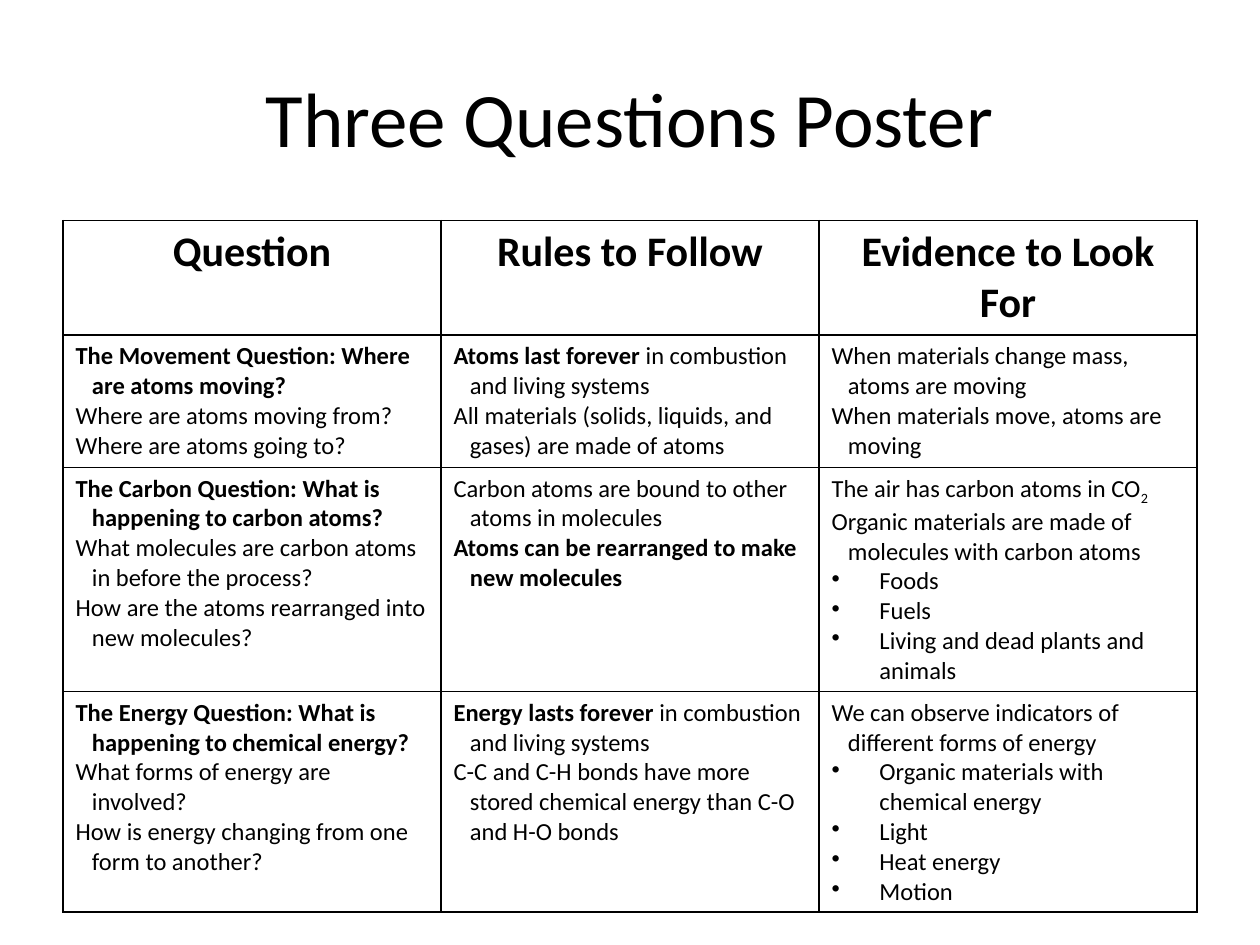
from lxml import etree
from pptx import Presentation, util as u
from pptx.dml.color import RGBColor
from pptx.enum import text
from pptx.oxml import ns

COLORS = {"ink": "000000", "paper": "FFFFFF"}
FONT = "Calibri"
HEADERS = ["Question", "Rules to Follow", "Evidence to Look For"]
ROWS = [
    [
        ["*The Movement Question: Where are atoms moving?*",
         "Where are atoms moving from?",
         "Where are atoms going to?"],
        ["*Atoms last forever* in combustion and living systems",
         "All materials (solids, liquids, and gases) are made of atoms"],
        ["When materials change mass, atoms are moving",
         "When materials move, atoms are moving"],
    ],
    [
        ["*The Carbon Question: What is happening to carbon atoms?*",
         "What molecules are carbon atoms in before the process?",
         "How are the atoms rearranged into new molecules?"],
        ["Carbon atoms are bound to other atoms in molecules",
         "*Atoms can be rearranged to make new molecules*"],
        ["The air has carbon atoms in CO_2_",
         "Organic materials are made of molecules with carbon atoms",
         "• Foods", "• Fuels", "• Living and dead plants and animals"],
    ],
    [
        ["*The Energy Question: What is happening to chemical energy?*",
         "What forms of energy are involved?",
         "How is energy changing from one form to another?"],
        ["*Energy lasts forever* in combustion and living systems",
         "C-C and C-H bonds have more stored chemical energy than C-O and H-O bonds"],
        ["We can observe indicators of different forms of energy",
         "• Organic materials with chemical energy",
         "• Light", "• Heat energy", "• Motion"],
    ],
]
ROW_HEIGHTS = [0.91, 1.05, 1.78, 1.75]


def style(para, size, bold=None):
    """Set the shared font of a paragraph."""
    font = para.font
    font.name, font.size, font.bold = FONT, u.Pt(size), bold
    font.color.rgb = RGBColor.from_string(COLORS["ink"])


def add_spans(para, marked):
    """Add runs from text where *...* is bold and _..._ is subscript."""
    for i, strong in enumerate(marked.split("*")):
        for j, piece in enumerate(strong.split("_")):
            if piece:
                span = para.add_run()
                span.text = piece
                if i % 2:
                    span.font.bold = True
                if j % 2:
                    span.font._element.set("baseline", "-25000")


def indent(para, hang, bullet=None):
    """Give a paragraph a hanging indent and an optional bullet."""
    props = para._p.get_or_add_pPr()
    props.set("marL", str(u.Inches(hang)))
    props.set("indent", str(-u.Inches(hang)))
    if bullet:
        mark = etree.Element(ns.qn("a:buChar"), char=bullet)
    else:
        mark = etree.Element(ns.qn("a:buNone"))
    props.insert(0, mark)


def frame_cell(cell):
    """Fill a cell and draw its four borders."""
    props = cell._tc.get_or_add_tcPr()
    for side in ("lnL", "lnR", "lnT", "lnB"):
        line = etree.SubElement(props, ns.qn(f"a:{side}"), w=str(u.Pt(1)))
        fill = etree.SubElement(line, ns.qn("a:solidFill"))
        etree.SubElement(fill, ns.qn("a:srgbClr"), val=COLORS["ink"])
    cell.fill.solid()
    cell.fill.fore_color.rgb = RGBColor.from_string(COLORS["paper"])


def write_header(cell, label):
    """Write a centred column heading."""
    para = cell.text_frame.paragraphs[0]
    para.text = label
    para.alignment = text.PP_ALIGN.CENTER
    style(para, 24, True)


def write_body(cell, lines):
    """Write hanging or bulleted paragraphs into a cell."""
    frame = cell.text_frame
    for i, line in enumerate(lines):
        para = frame.add_paragraph() if i else frame.paragraphs[0]
        bulleted = line.startswith("• ")
        indent(para, 0.38 if bulleted else 0.13, "•" if bulleted else None)
        add_spans(para, line.removeprefix("• "))
        style(para, 14)


def add_title(page, left, top, width, height):
    """Place the centred slide title in the given box."""
    box = page.shapes.add_textbox(*map(u.Inches, (left, top, width, height)))
    frame = box.text_frame
    frame.word_wrap = True
    frame.vertical_anchor = text.MSO_ANCHOR.MIDDLE
    para = frame.paragraphs[0]
    para.text = "Three Questions Poster"
    para.alignment = text.PP_ALIGN.CENTER
    style(para, 44)


def add_questions_table(page, left, top, width, height):
    """Place the table of questions, rules and evidence in the given box."""
    table = page.shapes.add_table(
        len(ROWS) + 1, len(HEADERS), *map(u.Inches, (left, top, width, height))
    ).table
    table.first_row = table.horz_banding = False
    for row, row_height in zip(table.rows, ROW_HEIGHTS):
        row.height = u.Inches(row_height)
    for cell in table.iter_cells():
        frame_cell(cell)
    for c, label in enumerate(HEADERS):
        write_header(table.cell(0, c), label)
    for r, row in enumerate(ROWS, start=1):
        for c, lines in enumerate(row):
            write_body(table.cell(r, c), lines)


def main():
    """Build and save the deck."""
    deck = Presentation()
    deck.slide_width, deck.slide_height = u.Inches(10), u.Inches(7.5)
    page = deck.slides.add_slide(deck.slide_layouts[6])
    add_title(page, 0.5, 0.3, 9, 1.25)
    add_questions_table(page, 0.5, 1.75, 9, sum(ROW_HEIGHTS))
    deck.save("out.pptx")


if __name__ == "__main__":
    main()
